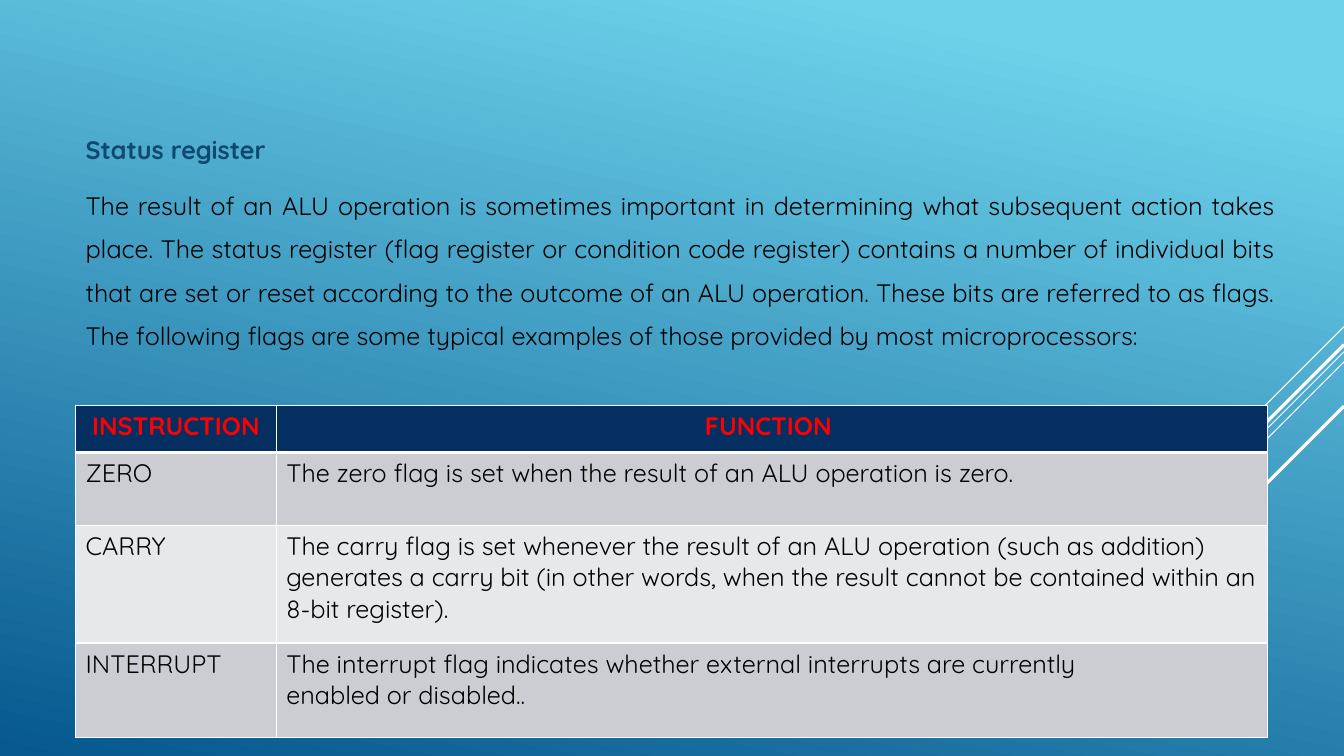
from pptx import Presentation
from pptx.dml.color import RGBColor
from pptx.enum.shapes import MSO_CONNECTOR
from pptx.enum.text import PP_ALIGN
from pptx.oxml import parse_xml
from pptx.oxml.ns import nsdecls
from pptx.util import Inches, Pt

FONT = "Quicksand"
WHITE, BLACK, RED = "FFFFFF", "000000", "FF0000"
NAVY, TITLE_BLUE = "052F61", "0F496F"
BANDS = ["CCCDD2", "E7E8EA"]

INTRO = (
    "The result of an ALU operation is sometimes important in determining what "
    "subsequent action takes place. The status register (flag register or condition "
    "code register) contains a number of individual bits that are set or reset "
    "according to the outcome of an ALU operation. These bits are referred to as "
    "flags. The following flags are some typical examples of those provided by most "
    "microprocessors:"
)
FLAGS = [
    ("INSTRUCTION", "FUNCTION "),
    ("ZERO", "The zero flag is set when the result of an ALU operation is zero."),
    ("CARRY", "The carry flag is set whenever the result of an ALU operation (such as "
              "addition) generates a carry bit (in other words, when the result cannot "
              "be contained within an 8-bit register)."),
    ("INTERRUPT", "The interrupt flag indicates whether external interrupts are "
                  "currently\nenabled or disabled.."),
]


def rgb(value):
    return RGBColor.from_string(value)


def write(tf, text, color=BLACK, bold=False, align=PP_ALIGN.LEFT, **spacing):
    """Fill a text frame, one paragraph per line; spacing sets paragraph attributes."""
    for i, line in enumerate(text.split("\n")):
        p = tf.add_paragraph() if i or tf.text else tf.paragraphs[0]
        p.alignment = align
        for name, value in spacing.items():
            setattr(p, name, value)
        r = p.add_run()
        r.text = line
        r.font.name, r.font.size, r.font.bold = FONT, Pt(18), bold
        r.font.color.rgb = rgb(color)


def paint_background(s):
    fill = s.background.fill
    fill.gradient()
    fill.gradient_angle = 258
    for stop, (position, color) in zip(fill.gradient_stops, [(0.1, "6ED2EB"), (1, "06588E")]):
        stop.position = position
        stop.color.rgb = rgb(color)


def add_diagonals(s, right):
    """Draw 45-degree lines running down and left from the right edge."""
    for top, run, width in [(3.24, 1, 0.75), (3.49, 3.26, 0.75), (3.59, 2.07, 0.75),
                            (3.42, 1.91, 2.25), (4.03, 1.39, 2.25)]:
        line = s.shapes.add_connector(MSO_CONNECTOR.STRAIGHT, Inches(right), Inches(top),
                                      Inches(right - run), Inches(top + run))
        line.line.color.rgb = rgb(WHITE)
        line.line.width = Pt(width)
        line._element.spPr.append(parse_xml(f"<a:effectLst {nsdecls('a')}/>"))


def add_intro(s, x, y, w, h):
    tf = s.shapes.add_textbox(Inches(x), Inches(y), Inches(w), Inches(h)).text_frame
    tf.word_wrap = True
    spacing = dict(align=PP_ALIGN.JUSTIFY, line_spacing=1.43,
                   space_before=Pt(3.6), space_after=Pt(6))
    write(tf, "Status register", color=TITLE_BLUE, bold=True, **spacing)
    write(tf, INTRO, **spacing)


def set_borders(cell, top, bottom):
    tcPr = cell._tc.get_or_add_tcPr()
    for i, (side, width) in enumerate([("L", 1), ("R", 1), ("T", top), ("B", bottom)]):
        tcPr.insert(i, parse_xml(
            f'<a:ln{side} {nsdecls("a")} w="{Pt(width)}"><a:solidFill>'
            f'<a:srgbClr val="{WHITE}"/></a:solidFill></a:ln{side}>'))


def add_flag_table(s, x, y, w, h):
    table = s.shapes.add_table(len(FLAGS), 2, Inches(x), Inches(y), Inches(w), Inches(h)).table
    for col, width in zip(table.columns, [1.99, w - 1.99]):
        col.width = Inches(width)
    for row, height in zip(table.rows, [0.47, 0.72, 1.17, h - 2.36]):
        row.height = Inches(height)
    for i, texts in enumerate(FLAGS):
        for j, text in enumerate(texts):
            cell = table.cell(i, j)
            cell.fill.solid()
            cell.fill.fore_color.rgb = rgb(BANDS[(i - 1) % 2] if i else NAVY)
            set_borders(cell, top=3 if i == 1 else 1, bottom=1 if i else 3)
            if i:
                write(cell.text_frame, text)
            else:
                write(cell.text_frame, text, color=RED, bold=True, align=PP_ALIGN.CENTER)


def main():
    prs = Presentation()
    prs.slide_width, prs.slide_height = Inches(13.33), Inches(7.5)
    s = prs.slides.add_slide(prs.slide_layouts[6])
    paint_background(s)
    add_diagonals(s, 13.33)
    add_intro(s, 0.75, 1.15, 11.99, 5.8)
    add_flag_table(s, 0.75, 4.02, 11.82, 3.3)
    prs.save("out.pptx")


if __name__ == "__main__":
    main()
